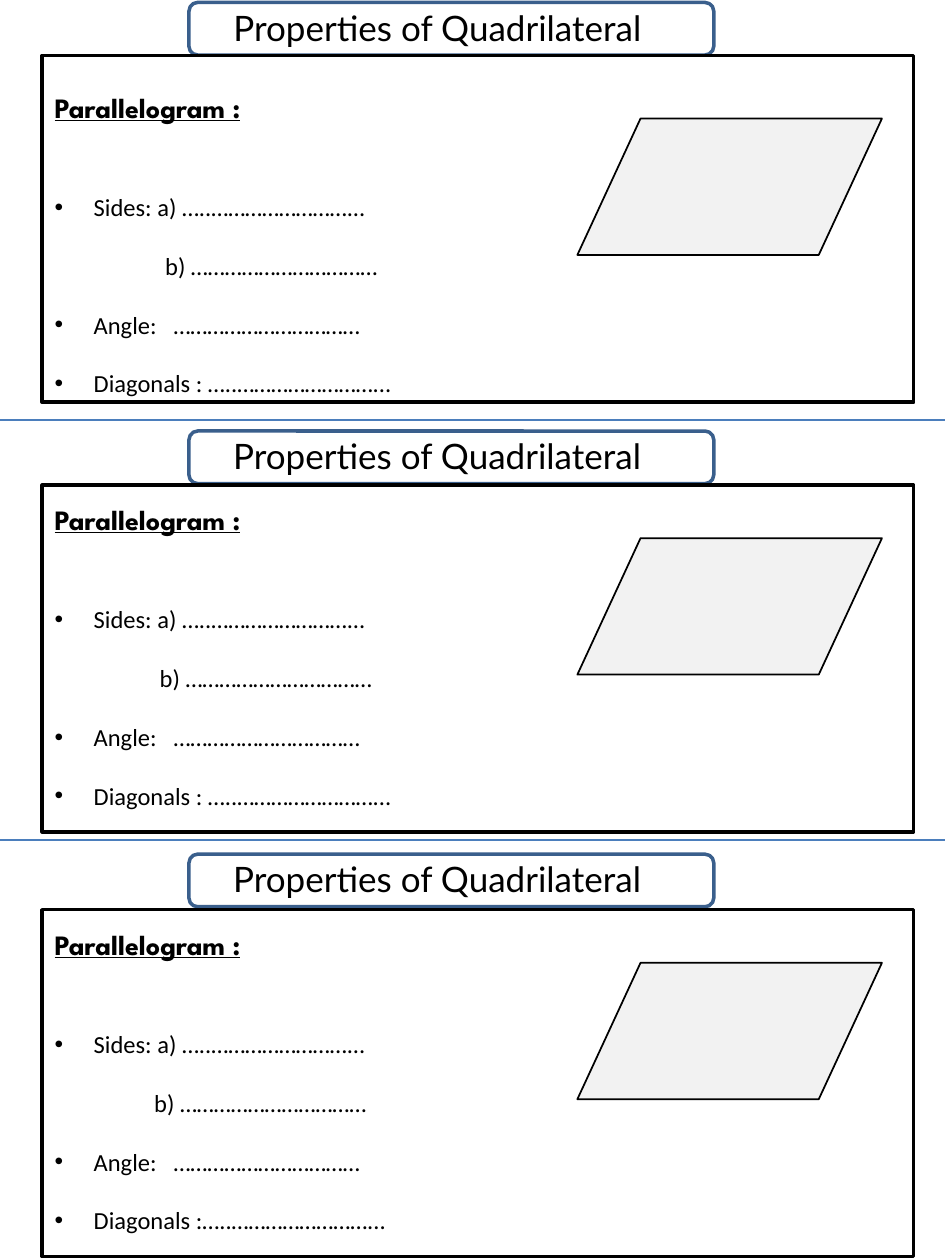
from pptx import Presentation, util as u
from pptx.dml.color import RGBColor
from pptx.enum import shapes, text
from pptx.oxml import parse_xml
from pptx.oxml.ns import nsdecls
from pptx.util import Cm

DOTS = "…..……………………..."
SHORT_DOTS = "……………………………"
BULLET_INDENT = 0.79


def color(value):
    return RGBColor.from_string(value)


class Worksheet:
    """Style and current slide of the worksheet."""

    ink, border, pale, rule = "000000", "3A5F8C", "F2F2F2", "4B7EBC"
    title_font, heading_font, body_font = "Lato", "League Spartan", "Calibri"

    def __init__(self, slide):
        self.slide = slide

    def add_run(self, para, words, font, size, bold=False):
        span = para.add_run()
        span.text = words
        span.font.name = font
        span.font.size = u.Pt(size)
        span.font.bold = span.font.underline = bold
        span.font.color.rgb = color(self.ink)

    def text_box(self, left, top, width, height):
        return self.slide.shapes.add_textbox(Cm(left), Cm(top), Cm(width), Cm(height))

    def title(self, box, top):
        box.left, box.top, box.width, box.height = Cm(4.45), Cm(top), Cm(11.23), Cm(1.11)
        frame = box.text_frame
        frame.word_wrap = True
        frame.auto_size = text.MSO_AUTO_SIZE.SHAPE_TO_FIT_TEXT
        frame.vertical_anchor = text.MSO_ANCHOR.TOP
        para = frame.paragraphs[0]
        para.alignment = text.PP_ALIGN.LEFT
        self.add_run(para, "Properties of Quadrilateral", self.title_font, 20)

    def outline(self, kind, left, top, width, height, line, weight, fill=None):
        shape = self.slide.shapes.add_shape(kind, Cm(left), Cm(top), Cm(width), Cm(height))
        shape.shadow.inherit = False
        if fill:
            shape.fill.solid()
            shape.fill.fore_color.rgb = color(fill)
        else:
            shape.fill.background()
        shape.line.color.rgb = color(line)
        shape.line.width = u.Pt(weight)
        return shape

    def answer_line(self, frame, words, indent=BULLET_INDENT, bullet=True):
        para = frame.add_paragraph()
        para.line_spacing = 2.0
        props = para._p.get_or_add_pPr()
        props.set("marL", str(Cm(indent)))
        if bullet:
            props.set("indent", str(-Cm(indent)))
            props.append(parse_xml(f'<a:buFont {nsdecls("a")} typeface="Arial"/>'))
            props.append(parse_xml(f'<a:buChar {nsdecls("a")} char="•"/>'))
        if "\t" in words:
            # The same place, counted from the indent and from the box edge
            stops = "".join(f'<a:tab pos="{Cm(place)}" algn="l"/>'
                            for place in (2.4 - indent, 2.4))
            props.append(parse_xml(f'<a:tabLst {nsdecls("a")}>{stops}</a:tabLst>'))
        self.add_run(para, words, self.body_font, 14)
        return para

    def questions(self, top, side_indent, diagonals):
        frame = self.text_box(0.85, top, 16.56, 7.26).text_frame
        frame.word_wrap = True
        frame.auto_size = text.MSO_AUTO_SIZE.SHAPE_TO_FIT_TEXT
        self.add_run(frame.paragraphs[0], "Parallelogram :", self.heading_font, 16, bold=True)
        first = self.answer_line(frame, "Sides: a) " + DOTS)
        first.space_before = u.Pt(22)
        self.answer_line(frame, "b) " + SHORT_DOTS, side_indent, bullet=False)
        self.answer_line(frame, "Angle:\t" + SHORT_DOTS)
        self.answer_line(frame, diagonals + DOTS)

    def divider(self, top):
        line = self.slide.shapes.add_connector(
            shapes.MSO_CONNECTOR.STRAIGHT, Cm(19.9), Cm(top), Cm(-1.27), Cm(top))
        line.line.color.rgb = color(self.rule)
        line.line.width = u.Pt(0.75)
        line._element.spPr.append(parse_xml(f'<a:effectLst {nsdecls("a")}/>'))

    def panel(self, title_box, title_top, frame_top, text_gap, figure_gap, side_indent, diagonals):
        kinds = shapes.MSO_SHAPE
        self.title(title_box, title_top)
        self.outline(kinds.ROUNDED_RECTANGLE, 3.81, title_top + 0.05, 10.58, 1.06, self.border, 2)
        self.outline(kinds.RECTANGLE, 0.85, frame_top, 17.57, 6.99, self.ink, 2)
        self.questions(frame_top + text_gap, side_indent, diagonals)
        figure = self.outline(kinds.PARALLELOGRAM, 11.64, frame_top + figure_gap, 6.14, 2.75,
                              self.ink, 1, self.pale)
        figure.adjustments[0] = 0.463


def main():
    deck = Presentation()
    deck.slide_width, deck.slide_height = Cm(19.05), Cm(25.4)
    page = deck.slides.add_slide(deck.slide_layouts[5])
    sheet = Worksheet(page)
    # title top, frame top, text gap, figure gap, indent of b), label
    panels = [
        (0, 1.12, 0.58, 1.27, 2.23, "Diagonals : "),
        (8.64, 9.78, 0.23, 1.07, 2.12, "Diagonals : "),
        (17.17, 18.34, 0.23, 1.07, 2.01, "Diagonals :"),
    ]
    for number, places in enumerate(panels):
        box = sheet.text_box(0, 0, 1, 1) if number else page.shapes.title
        sheet.panel(box, *places)
    for number in (1, 2):
        sheet.divider(number * 25.4 / 3)
    deck.save("out.pptx")


if __name__ == "__main__":
    main()
